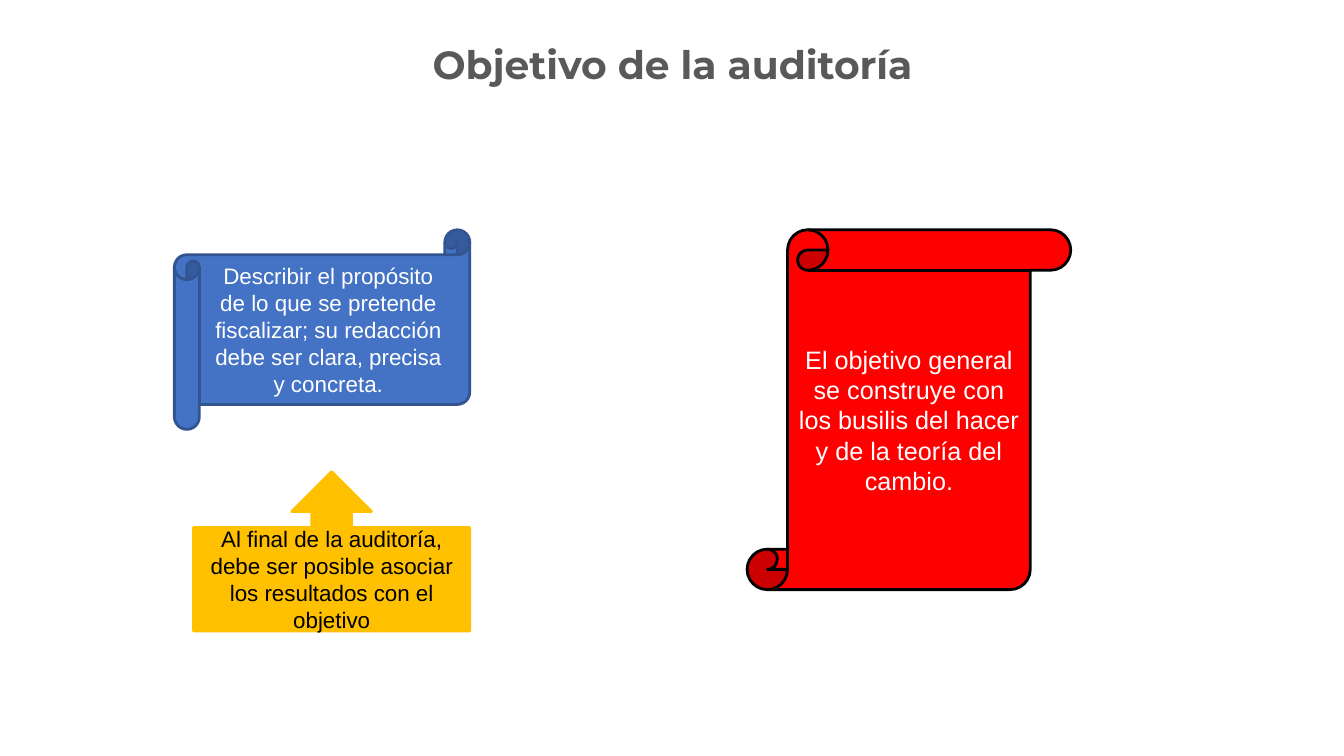
import pptx
import pptx.util
import pptx.dml.color
import pptx.enum.shapes
import pptx.enum.text

Inches, Pt = pptx.util.Inches, pptx.util.Pt
SHAPE = pptx.enum.shapes.MSO_SHAPE
ANCHOR = pptx.enum.text.MSO_ANCHOR

COLORS = {
    "gray": "595959",
    "blue": "4472C4",
    "dark blue": "325491",
    "amber": "FFC000",
    "red": "FF0000",
    "black": "000000",
    "white": "FFFFFF",
}

TITLE = "Objetivo de la auditoría"
TITLE_BOX = (0.92, 0.4, 11.5, 0.66)

# preset, (left, top, width, height), fill, line, text colour, text size, text
CALLOUTS = [
    (SHAPE.HORIZONTAL_SCROLL, (1.73, 2.28, 2.93, 1.98), "blue", "dark blue", "white", 16,
     "Describir el propósito de lo que se pretende fiscalizar; "
     "su redacción debe ser clara, precisa y concreta."),
    (SHAPE.UP_ARROW_CALLOUT, (1.92, 4.68, 2.74, 1.58), "amber", "amber", "black", 16,
     "Al final de la auditoría, debe ser posible asociar los resultados con el objetivo"),
    (SHAPE.VERTICAL_SCROLL, (7.41, 2.28, 3.21, 3.57), "red", "black", "white", 18,
     "El objetivo general se construye con los busilis del hacer y de la teoría del cambio."),
]


def rgb(color):
    return pptx.dml.color.RGBColor.from_string(COLORS[color])


def write(frame, text, anchor, font_name, size, color, bold=False):
    frame.word_wrap = True
    frame.vertical_anchor = anchor
    frame.text = text
    paragraph = frame.paragraphs[0]
    paragraph.alignment = pptx.enum.text.PP_ALIGN.CENTER
    font = paragraph.runs[0].font
    font.name, font.size, font.bold = font_name, Pt(size), bold
    font.color.rgb = rgb(color)


def add_title(slide):
    frame = slide.shapes.add_textbox(*map(Inches, TITLE_BOX)).text_frame
    frame.margin_left = frame.margin_right = Inches(0.05)
    write(frame, TITLE, ANCHOR.TOP, "Montserrat", 28, "gray", bold=True)
    frame.paragraphs[0].line_spacing = 0.9


def add_callout(slide, preset, box, fill, line, text_color, size, text):
    callout = slide.shapes.add_shape(preset, *map(Inches, box))
    callout.shadow.inherit = False
    callout.fill.solid()
    callout.fill.fore_color.rgb = rgb(fill)
    callout.line.color.rgb = rgb(line)
    callout.line.width = Pt(2)
    write(callout.text_frame, text, ANCHOR.MIDDLE, "Arial", size, text_color)


def main():
    deck = pptx.Presentation()
    deck.slide_width, deck.slide_height = Inches(13.33), Inches(7.5)
    slide = deck.slides.add_slide(deck.slide_layouts[6])
    add_title(slide)
    for callout in CALLOUTS:
        add_callout(slide, *callout)
    deck.save("out.pptx")


if __name__ == "__main__":
    main()
